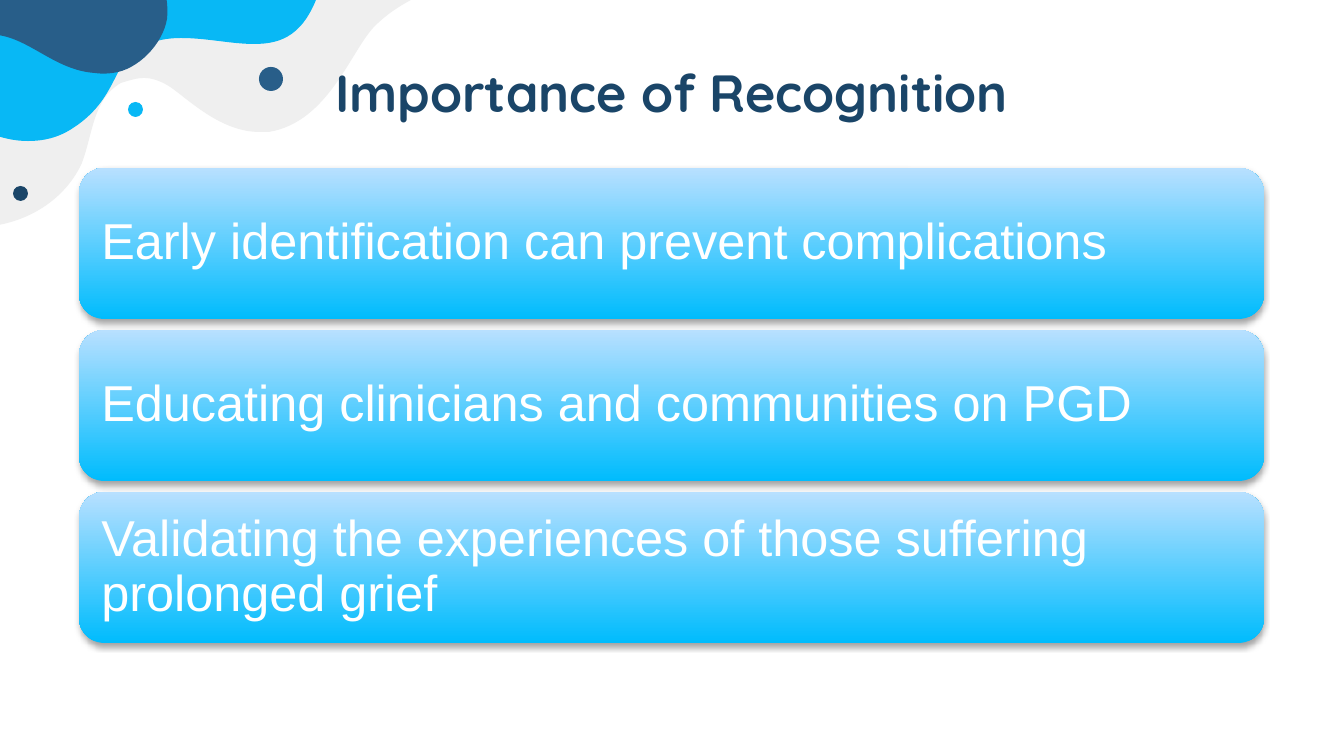
import pptx
import pptx.dml.color
import pptx.enum.shapes
import pptx.enum.text
import pptx.oxml
import pptx.oxml.ns
import pptx.util
import lxml.etree

RGBColor = pptx.dml.color.RGBColor
MSO_SHAPE = pptx.enum.shapes.MSO_SHAPE
qn = pptx.oxml.ns.qn

PX = 914400 / 134.4

GREY = RGBColor(0xEF, 0xEF, 0xEF)
CYAN = RGBColor(0x08, 0xB8, 0xF5)
STEEL = RGBColor(0x28, 0x5E, 0x89)
NAVY = RGBColor(0x1A, 0x45, 0x68)
WHITE = RGBColor(0xFF, 0xFF, 0xFF)
CARD_BOTTOM = RGBColor(0x00, 0xBC, 0xFD)
CARD_TOP = RGBColor(0xB8, 0xE0, 0xFF)

GREY_WAVE = [
    (410, -17),
    (431, -17, 450, -16, 449, -12), (446, -8, 418, -3, 411, 0),
    (398, 7, 386, 15, 375, 26), (351, 50, 329, 122, 269, 132),
    (265, 132, 262, 132, 259, 132), (218, 132, 183, 94, 167, 85),
    (160, 81, 152, 78, 144, 78), (136, 78, 128, 81, 121, 83),
    (93, 99, 93, 134, 82, 163), (67, 196, 34, 220, -7, 226),
    (-4, 151, -9, 77, -20, 3), (31, -5, 85, -8, 137, -9),
    (210, -11, 284, -13, 356, -16), (362, -16, 387, -17, 410, -17),
]
CYAN_WAVE = [
    (28, 141),
    (-7, 141, -35, 120, -35, 120), (-35, -11), (320, -11),
    (305, 35, 282, 44, 254, 44), (231, 44, 207, 38, 181, 38),
    (172, 38, 163, 39, 153, 42), (110, 52, 124, 95, 73, 128),
    (58, 138, 43, 141, 28, 141),
]
STEEL_WAVE = [
    (94, 73),
    (101, 74, 106, 74, 113, 73), (138, 70, 163, 44, 167, 19),
    (169, 0, 164, -28, 144, -44), (136, -50, 129, -52, 122, -52),
    (117, -52, 112, -52, 106, -52), (44, -44, -19, -36, -82, -42),
    (-87, -42, -93, -43, -99, -43), (-97, -30, -98, -15, -95, 0),
    (-93, 13, -86, 36, -74, 44), (-70, 46, -67, 47, -63, 47),
    (-47, 48, -30, 34, -5, 35), (-4, 35, -4, 35, -3, 35),
    (30, 39, 55, 70, 94, 73),
]
WAVES = [(GREY_WAVE, GREY), (CYAN_WAVE, CYAN), (STEEL_WAVE, STEEL)]
DOTS = [(259, 67, 24, STEEL), (128, 102, 15, CYAN), (13, 186, 15, NAVY)]

MESSAGES = [
    "Early identification can prevent complications",
    "Educating clinicians and communities on PGD",
    "Validating the experiences of those suffering prolonged grief",
]
CARD_LEFT, CARD_TOP_EDGE, CARD_WIDTH, CARD_HEIGHT, CARD_STEP = 79, 168, 1185, 151, 162

CARD_SHADOW = (
    '<a:effectLst %s><a:outerShdw blurRad="39370" dist="22860" dir="5400000" rotWithShape="0">'
    '<a:srgbClr val="000000"><a:alpha val="35000"/></a:srgbClr>'
    "</a:outerShdw></a:effectLst>" % pptx.oxml.ns.nsdecls("a")
)


def px(length):
    return pptx.util.Emu(round(length * PX))


def paint_flat(shape, color):
    shape.shadow.inherit = False
    shape.fill.solid()
    shape.fill.fore_color.rgb = color
    shape.line.fill.background()


def bend_segments(wave, outline):
    left = min(segment[-2] for segment in outline)
    top = min(segment[-1] for segment in outline)
    lines = list(wave.element.iter(qn("a:lnTo")))
    for line, segment in zip(lines, outline[1:]):
        if len(segment) == 2:
            continue
        curve = lxml.etree.Element(qn("a:cubicBezTo"))
        for x, y in zip(segment[::2], segment[1::2]):
            lxml.etree.SubElement(curve, qn("a:pt"), x=str(x - left), y=str(y - top))
        line.getparent().replace(line, curve)


def add_wave(slide, outline, color):
    anchors = [segment[-2:] for segment in outline]
    builder = slide.shapes.build_freeform(*anchors[0], scale=PX)
    builder.add_line_segments(anchors[1:], close=True)
    wave = builder.convert_to_shape()
    bend_segments(wave, outline)
    paint_flat(wave, color)


def add_dot(slide, left, top, size, color):
    dot = slide.shapes.add_shape(MSO_SHAPE.OVAL, px(left), px(top), px(size), px(size))
    paint_flat(dot, color)


def style_text(frame, align, font_name, size, color, bold):
    frame.word_wrap = True
    frame.vertical_anchor = pptx.enum.text.MSO_ANCHOR.MIDDLE
    paragraph = frame.paragraphs[0]
    paragraph.alignment = align
    paragraph.line_spacing = 0.9
    font = paragraph.runs[0].font
    font.name = font_name
    font.size = pptx.util.Pt(size)
    font.color.rgb = color
    font.bold = bold


def set_title(slide, text):
    title = slide.shapes.title
    title.left, title.top, title.width, title.height = px(79), px(54), px(1185), px(84)
    frame = title.text_frame
    frame.text = text
    frame.margin_left = frame.margin_right = frame.margin_top = frame.margin_bottom = px(13)
    style_text(frame, pptx.enum.text.PP_ALIGN.CENTER, "Quicksand", 28, NAVY, True)
    title.element.getparent().append(title.element)


def add_card(slide, top, message):
    card = slide.shapes.add_shape(
        MSO_SHAPE.ROUNDED_RECTANGLE, px(CARD_LEFT), px(top), px(CARD_WIDTH), px(CARD_HEIGHT))
    card.fill.gradient()
    card.fill.gradient_angle = 90
    for stop, position, color in zip(card.fill.gradient_stops, (0, 1), (CARD_BOTTOM, CARD_TOP)):
        stop.position = position
        stop.color.rgb = color
    card.line.fill.background()
    card.element.spPr.append(pptx.oxml.parse_xml(CARD_SHADOW))
    frame = card.text_frame
    frame.text = message
    frame.margin_left = frame.margin_right = px(15)
    frame.margin_top = frame.margin_bottom = px(15)
    style_text(frame, pptx.enum.text.PP_ALIGN.LEFT, "Arial", 27, WHITE, False)


def main():
    deck = pptx.Presentation()
    deck.slide_width, deck.slide_height = px(1344), px(756)
    slide = deck.slides.add_slide(deck.slide_layouts[5])
    for outline, color in WAVES:
        add_wave(slide, outline, color)
    for dot in DOTS:
        add_dot(slide, *dot)
    set_title(slide, "Importance of Recognition")
    for row, message in enumerate(MESSAGES):
        add_card(slide, CARD_TOP_EDGE + row * CARD_STEP, message)
    deck.save("out.pptx")


if __name__ == "__main__":
    main()
